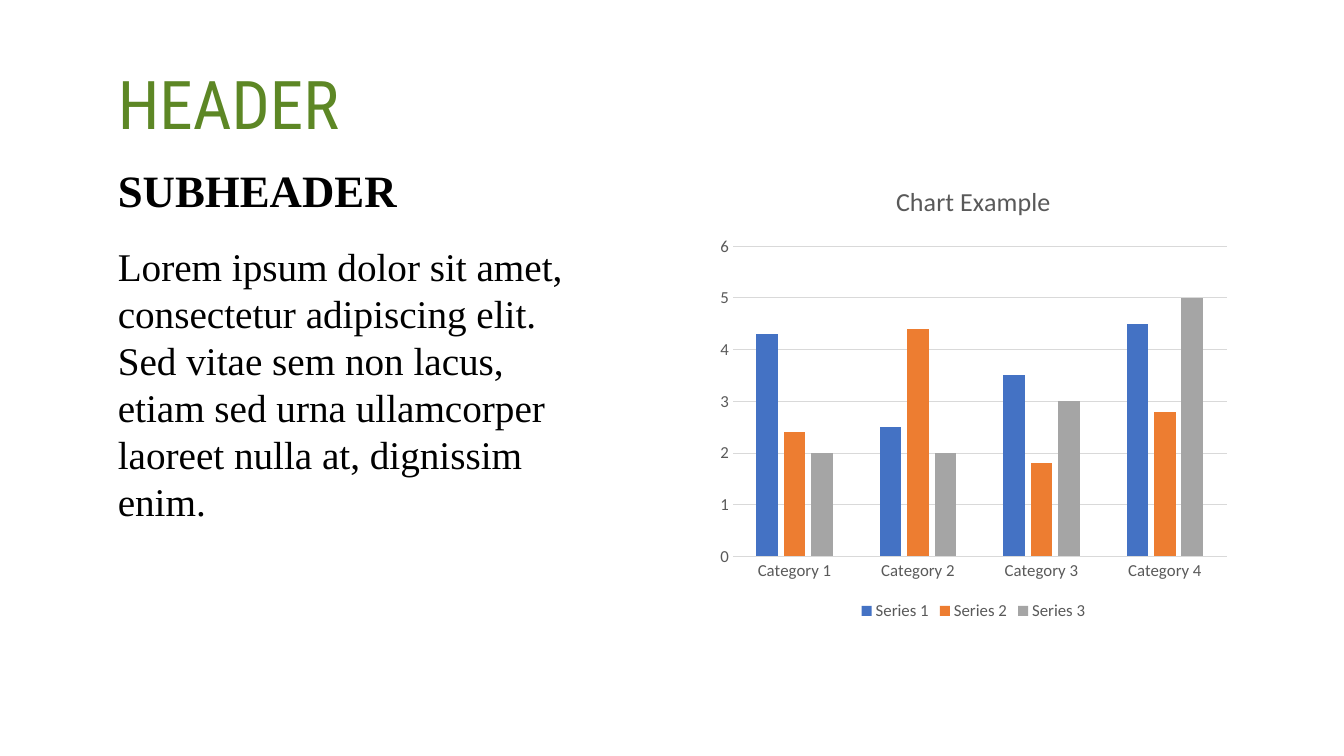
import pptx
import pptx.chart.data
import pptx.dml.color
import pptx.enum.chart
import pptx.enum.text
import pptx.util

RGBColor = pptx.dml.color.RGBColor
GREEN = RGBColor(0x5D, 0x87, 0x25)
BLACK = RGBColor(0x00, 0x00, 0x00)
GRAY = RGBColor(0x59, 0x59, 0x59)
RULE = RGBColor(0xD9, 0xD9, 0xD9)
BLUE = RGBColor(0x44, 0x72, 0xC4)
ORANGE = RGBColor(0xED, 0x7D, 0x31)
SILVER = RGBColor(0xA5, 0xA5, 0xA5)

SERIF = "Times New Roman"
# lines, (left, top, width, height) in px, font, points, colour, bold, line spacing
TEXTS = [
    (["HEADER"], (107, 66, 560, 98), "Roboto Condensed", 48, GREEN, False, 0.9),
    (["SUBHEADER"], (107, 163, 560, 98), SERIF, 32, BLACK, True, 0.9),
    (["Lorem ipsum dolor sit amet, consectetur adipiscing elit. ",
      "Sed vitae sem non lacus, etiam sed urna ullamcorper laoreet nulla at, "
      "dignissim enim."],
     (107, 235, 492, 293), SERIF, 28, BLACK, False, 1.0),
]
CHART_BOX = (704, 163, 523, 457)
CHART_TITLE = "Chart Example"
CATEGORIES = ["Category 1", "Category 2", "Category 3", "Category 4"]
SERIES = [
    ("Series 1", (4.3, 2.5, 3.5, 4.5), BLUE),
    ("Series 2", (2.4, 4.4, 1.8, 2.8), ORANGE),
    ("Series 3", (2, 2, 3, 5), SILVER),
]


def px(length):
    """Turn px, 100 to the inch, into EMU."""
    return pptx.util.Emu(length * 9144)


def style(font, name, points, colour, bold=False):
    font.name = name
    font.size = pptx.util.Pt(points)
    font.bold = bold
    font.color.rgb = colour


def rule(line):
    line.color.rgb = RULE
    line.width = pptx.util.Pt(0.75)


def add_text(page, lines, place, name, points, colour, bold, spacing):
    frame = page.shapes.add_textbox(*map(px, place)).text_frame
    frame.word_wrap = True
    para = frame.paragraphs[0]
    para.line_spacing = spacing
    for number, line in enumerate(lines):
        if number:
            para.add_line_break()
        span = para.add_run()
        span.text = line
        style(span.font, name, points, colour, bold)


def add_column_chart(page):
    data = pptx.chart.data.CategoryChartData()
    data.categories = CATEGORIES
    for name, values, _ in SERIES:
        data.add_series(name, values)
    kinds = pptx.enum.chart
    chart = page.shapes.add_chart(
        kinds.XL_CHART_TYPE.COLUMN_CLUSTERED, *map(px, CHART_BOX), data).chart
    style(chart.font, "Calibri", 12, GRAY)

    chart.has_title = True
    span = chart.chart_title.text_frame.paragraphs[0].add_run()
    span.text = CHART_TITLE
    style(span.font, "Calibri", 18.6, GRAY)
    chart.chart_title.include_in_layout = False

    chart.has_legend = True
    chart.legend.position = kinds.XL_LEGEND_POSITION.BOTTOM
    chart.legend.include_in_layout = False
    style(chart.legend.font, "Calibri", 12, GRAY)

    for axis in (chart.category_axis, chart.value_axis):
        axis.major_tick_mark = kinds.XL_TICK_MARK.NONE
        axis.minor_tick_mark = kinds.XL_TICK_MARK.NONE
        style(axis.tick_labels.font, "Calibri", 12, GRAY)
    rule(chart.category_axis.format.line)
    values_axis = chart.value_axis
    values_axis.format.line.fill.background()
    values_axis.minimum_scale, values_axis.maximum_scale = 0, 6
    values_axis.major_unit = 1
    rule(values_axis.major_gridlines.format.line)

    plot = chart.plots[0]
    plot.gap_width, plot.overlap = 219, -27
    plot.vary_by_categories = False
    for series, (_, _, colour) in zip(plot.series, SERIES):
        series.format.fill.solid()
        series.format.fill.fore_color.rgb = colour


def main():
    deck = pptx.Presentation()
    deck.slide_width, deck.slide_height = px(1333), px(750)
    page = deck.slides.add_slide(deck.slide_layouts[6])
    for text in TEXTS:
        add_text(page, *text)
    add_column_chart(page)
    deck.save("out.pptx")


if __name__ == "__main__":
    main()
